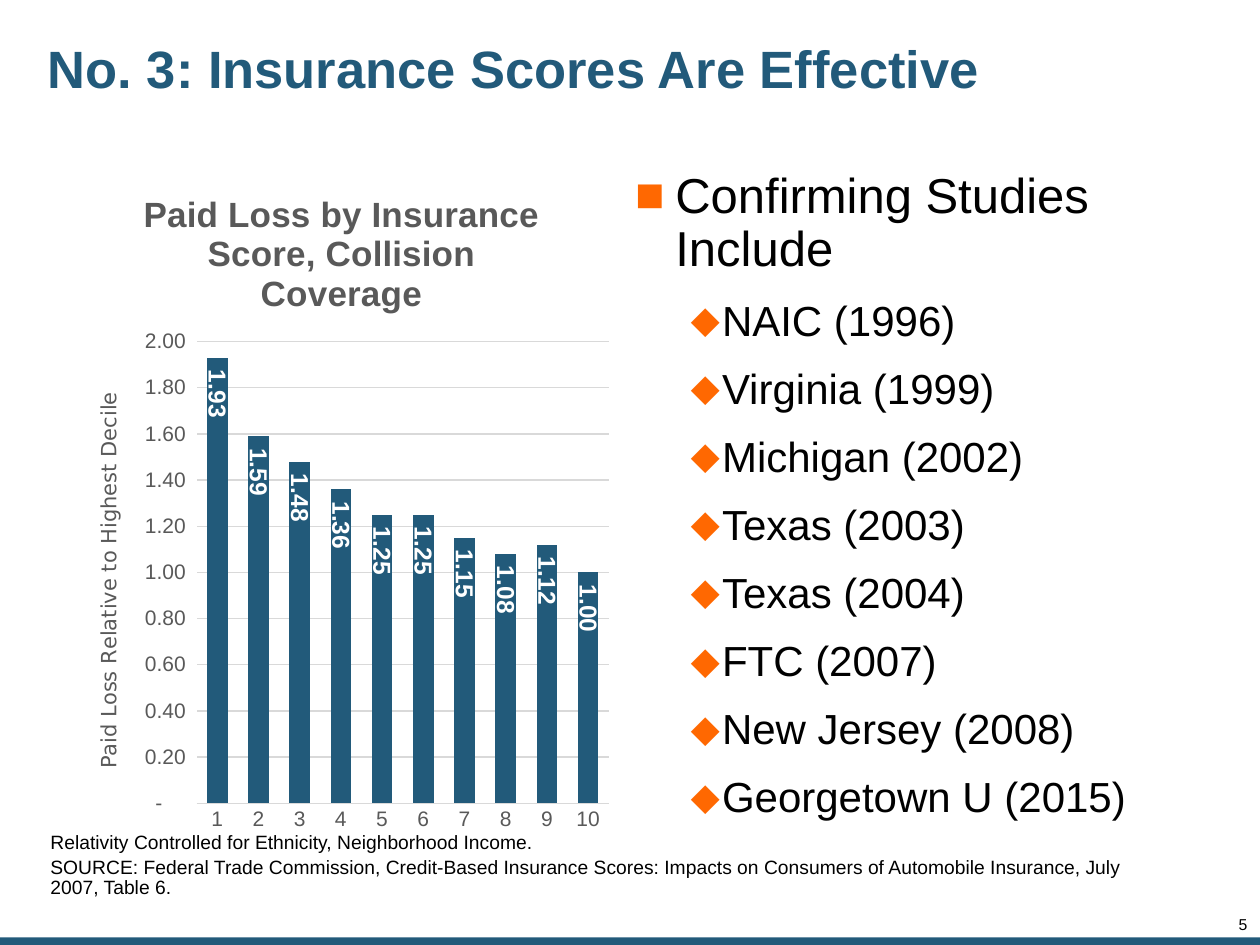
from lxml import etree
from pptx import Presentation
from pptx.chart.data import CategoryChartData
from pptx.dml.color import RGBColor
from pptx.enum.chart import XL_CHART_TYPE as ChartType, XL_LABEL_POSITION as LabelPosition, XL_TICK_MARK as TickMark
from pptx.enum.shapes import MSO_SHAPE as Shape
from pptx.enum.text import MSO_ANCHOR as Anchor, PP_ALIGN as Align
from pptx.oxml import parse_xml
from pptx.oxml.ns import nsdecls, qn
from pptx.util import Inches, Pt

WIDTH, HEIGHT = 10, 7.5
TEAL, ORANGE, GRAY, PALE = "225A7A", "FF6801", "595959", "D9D9D9"
BLACK, WHITE = "000000", "FFFFFF"
COLUMN_TOP, COLUMN_WIDTH, COLUMN_HEIGHT = 1.31, 4.42, 5.39
NUMBER_FORMAT = '_(* #,##0.00_);_(* \\(#,##0.00\\);_(* "-"??_);_(@_)'
LOSSES = [1.93, 1.59, 1.48, 1.36, 1.25, 1.25, 1.15, 1.08, 1.12, 1]
STUDIES = ["NAIC (1996)", "Virginia (1999)", "Michigan (2002)", "Texas (2003)",
           "Texas (2004)", "FTC (2007)", "New Jersey (2008)", "Georgetown U (2015)"]
NOTES = ["Relativity Controlled for Ethnicity, Neighborhood Income.",
         "SOURCE: Federal Trade Commission, Credit-Based Insurance Scores: Impacts on "
         "Consumers of Automobile Insurance, July 2007, Table 6."]


def color(value):
    """Turn a hex string into a colour."""
    return RGBColor.from_string(value)


def style(font, size, value, bold=False, name="Arial"):
    """Set the size, colour, weight and family of a font."""
    font.size, font.bold, font.name = Pt(size), bold, name
    font.color.rgb = color(value)


def add_frame(slide, box, insets=(0.05,) * 4, anchor=Anchor.TOP):
    """Add a wrapping text box and return its text frame."""
    frame = slide.shapes.add_textbox(*map(Inches, box)).text_frame
    frame.word_wrap, frame.vertical_anchor = True, anchor
    (frame.margin_left, frame.margin_top,
     frame.margin_right, frame.margin_bottom) = map(Inches, insets)
    return frame


def add_line(frame, text, size, value=BLACK, bold=False, spacing=0.9, before=0):
    """Write one paragraph, using the empty first one when it is free."""
    first = frame.paragraphs[0]
    paragraph = frame.add_paragraph() if first.runs else first
    paragraph.line_spacing, paragraph.space_before = spacing, Pt(before)
    run = paragraph.add_run()
    run.text = text
    style(run.font, size, value, bold)
    return paragraph


def add_bullet(paragraph, symbol, indent, hanging):
    """Give a paragraph a coloured bullet and a hanging indent."""
    properties = paragraph._p.get_or_add_pPr()
    properties.set("marL", str(Inches(indent)))
    properties.set("indent", str(Inches(-hanging)))
    bullet_color = etree.SubElement(properties, qn("a:buClr"))
    etree.SubElement(bullet_color, qn("a:srgbClr"), val=ORANGE)
    etree.SubElement(properties, qn("a:buFont"), typeface="Arial")
    etree.SubElement(properties, qn("a:buChar"), char=symbol)


def add_title(slide, box):
    """Place the slide title."""
    frame = add_frame(slide, box, anchor=Anchor.MIDDLE)
    add_line(frame, "No. 3: Insurance Scores Are Effective", 30, TEAL, True)


def add_studies(slide, box):
    """Place the list of confirming studies."""
    frame = add_frame(slide, box)
    add_bullet(add_line(frame, "Confirming Studies Include", 28), "■", 0.32, 0.32)
    for study in STUDIES:
        add_bullet(add_line(frame, study, 24, before=13), "⬥", 0.69, 0.25)


def name_part(part, text, *font):
    """Title a chart or an axis."""
    run = part.text_frame.paragraphs[0].add_run()
    run.text = text
    style(run.font, *font)


def set_layout(plot_area, **shares):
    """Fix the inner plot area as shares of the chart."""
    for old in plot_area.findall(qn("c:layout")):
        plot_area.remove(old)
    parts = "".join(f'<c:{key} val="{value}"/>' for key, value in shares.items())
    plot_area.insert(0, parse_xml(
        f'<c:layout {nsdecls("c")}><c:manualLayout><c:layoutTarget val="inner"/>'
        f'<c:xMode val="edge"/><c:yMode val="edge"/>{parts}</c:manualLayout></c:layout>'))


def style_axes(chart):
    """Format both axes and the gridlines."""
    category, value = chart.category_axis, chart.value_axis
    for axis in (category, value):
        axis.major_tick_mark = axis.minor_tick_mark = TickMark.NONE
        style(axis.tick_labels.font, 12, GRAY)
    value.minimum_scale, value.maximum_scale, value.major_unit = 0, 2, 0.2
    value.tick_labels.number_format = NUMBER_FORMAT
    value.tick_labels.number_format_is_linked = False
    value.format.line.fill.background()
    for line in (category.format.line, value.major_gridlines.format.line):
        line.color.rgb, line.width = color(PALE), Pt(0.75)
    name_part(value.axis_title, "Paid Loss Relative to Highest Decile",
              12, GRAY, False, "DejaVu Sans")


def add_loss_chart(slide, box):
    """Place the column chart of paid loss by score decile."""
    data = CategoryChartData()
    data.categories = [str(decile) for decile in range(1, len(LOSSES) + 1)]
    data.add_series("Series 1", LOSSES)
    chart = slide.shapes.add_chart(ChartType.COLUMN_CLUSTERED, *map(Inches, box), data).chart
    style(chart.font, 10, BLACK, name="DejaVu Sans")
    chart.has_legend = False
    name_part(chart.chart_title, "Paid Loss by Insurance Score, Collision Coverage", 20, GRAY, True)
    style_axes(chart)
    plot = chart.plots[0]
    plot.gap_width, plot.vary_by_categories = 100, False
    fill = plot.series[0].format.fill
    fill.solid()
    fill.fore_color.rgb = color(TEAL)
    labels = plot.series[0].data_labels
    labels.show_value, labels.position = True, LabelPosition.INSIDE_END
    labels.number_format, labels.number_format_is_linked = NUMBER_FORMAT, False
    style(labels.font, 14, WHITE, True)
    label_body = labels._element.find(qn("c:txPr")).find(qn("a:bodyPr"))
    label_body.set("rot", "5400000")
    label_body.set("vert", "horz")
    set_layout(chart._chartSpace.chart.plotArea, x=0.24, y=0.26, w=0.74, h=0.68)


def add_notes(slide, box):
    """Place the remark and the source under the chart."""
    frame = add_frame(slide, box, (0.4, 0, 0, 0.15), Anchor.BOTTOM)
    for index, note in enumerate(NOTES):
        add_line(frame, note, 11, spacing=0.85, before=3 * index)


def add_footer(slide, box):
    """Place the bottom bar and the slide number above it."""
    bar = slide.shapes.add_shape(Shape.RECTANGLE, *map(Inches, box))
    bar.shadow.inherit = False
    bar.fill.solid()
    bar.fill.fore_color.rgb = color(TEAL)
    bar.line.fill.background()
    left, top, width, _ = box
    frame = add_frame(slide, (left + width - 0.59, top - 0.16, 0.49, 0.13), (0,) * 4)
    add_line(frame, "5", 9, spacing=0.85).alignment = Align.RIGHT


def main():
    """Build and save the slide."""
    presentation = Presentation()
    presentation.slide_width, presentation.slide_height = Inches(WIDTH), Inches(HEIGHT)
    slide = presentation.slides.add_slide(presentation.slide_layouts[6])
    column = COLUMN_TOP, COLUMN_WIDTH, COLUMN_HEIGHT
    add_footer(slide, (0, HEIGHT - 0.06, WIDTH, 0.06))
    add_title(slide, (0.33, 0.1, 8.09, 0.94))
    add_loss_chart(slide, (0.5, *column))
    add_notes(slide, (0, 6.61, 8.95, 0.67))
    add_studies(slide, (4.99, *column))
    presentation.save("out.pptx")


if __name__ == "__main__":
    main()
